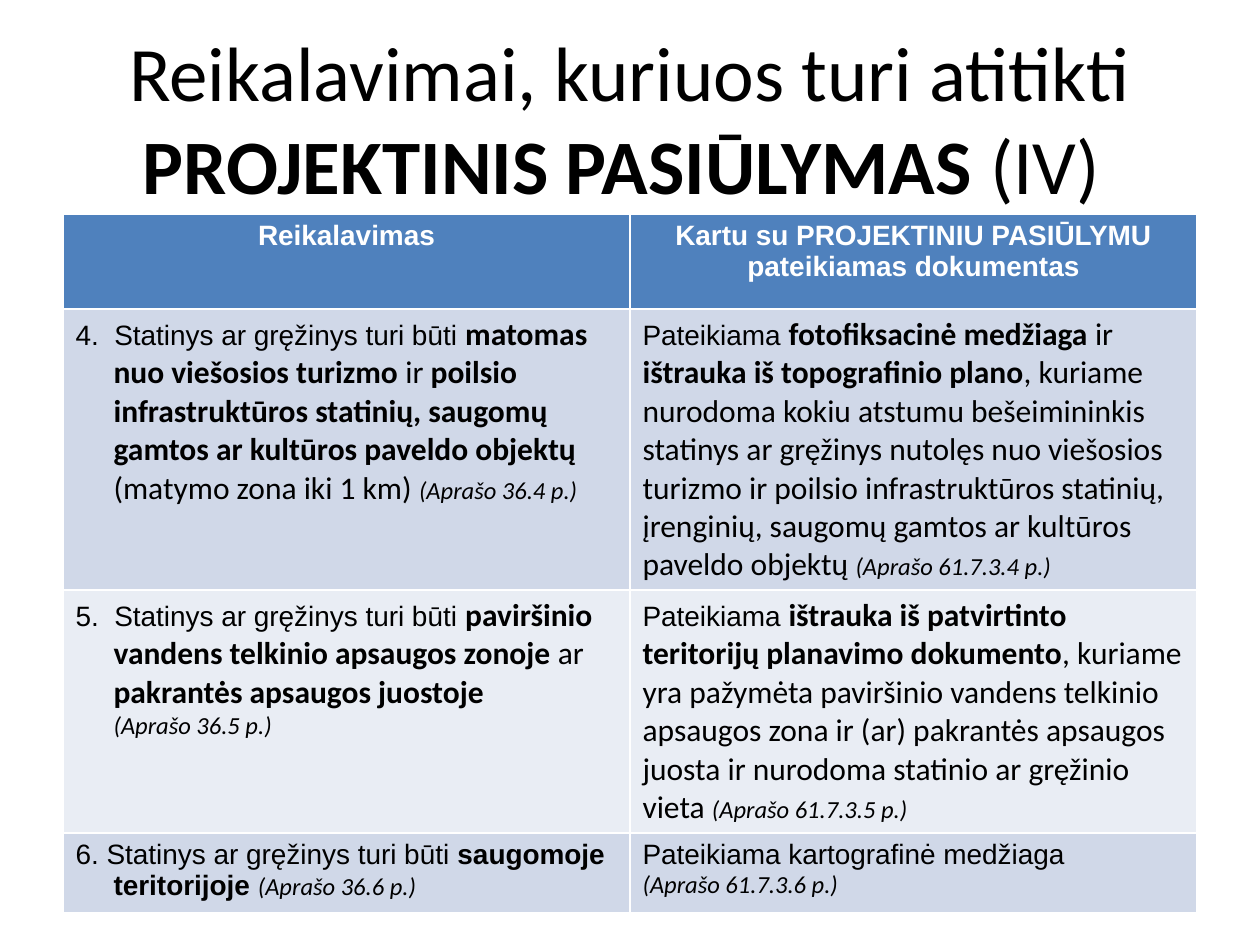
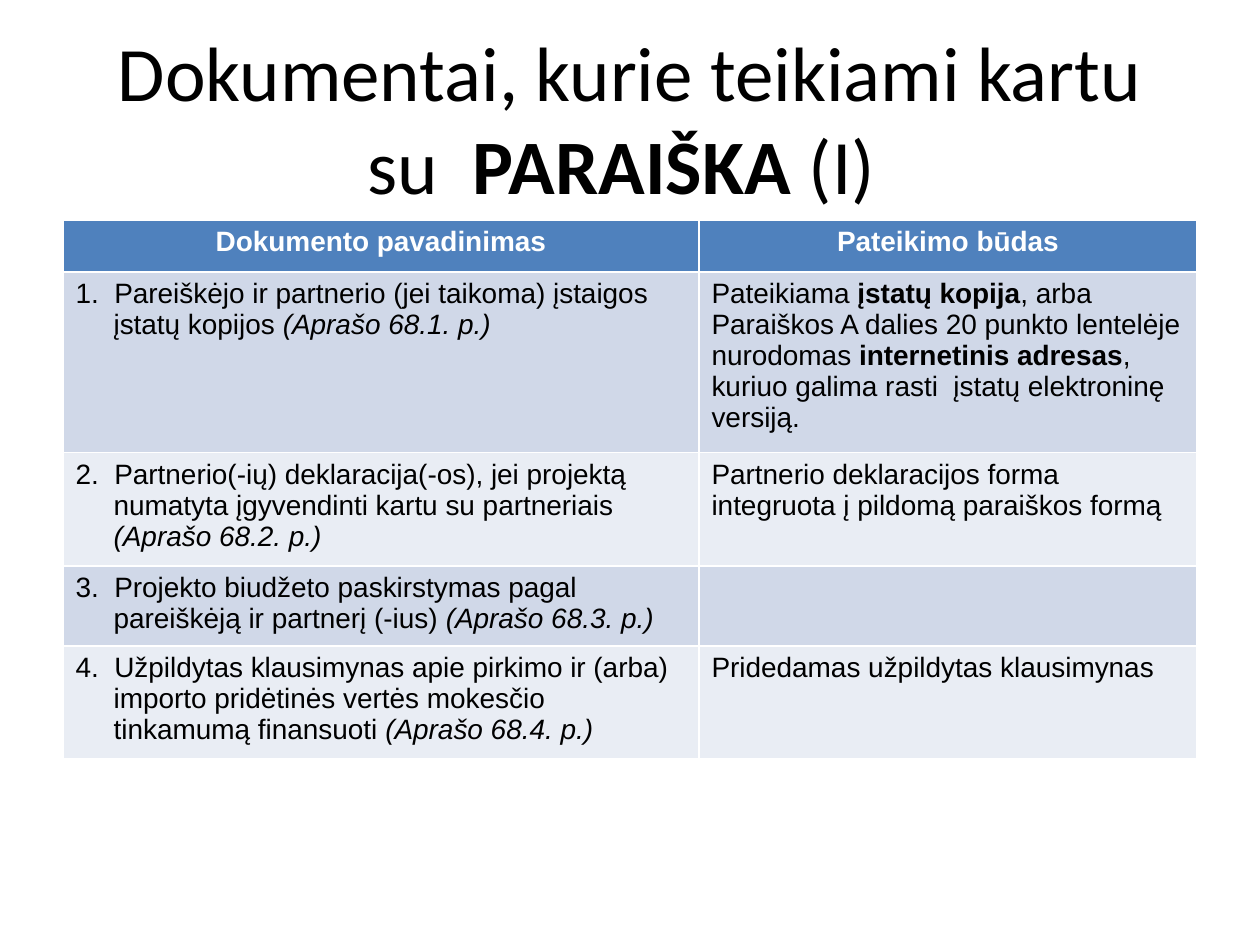
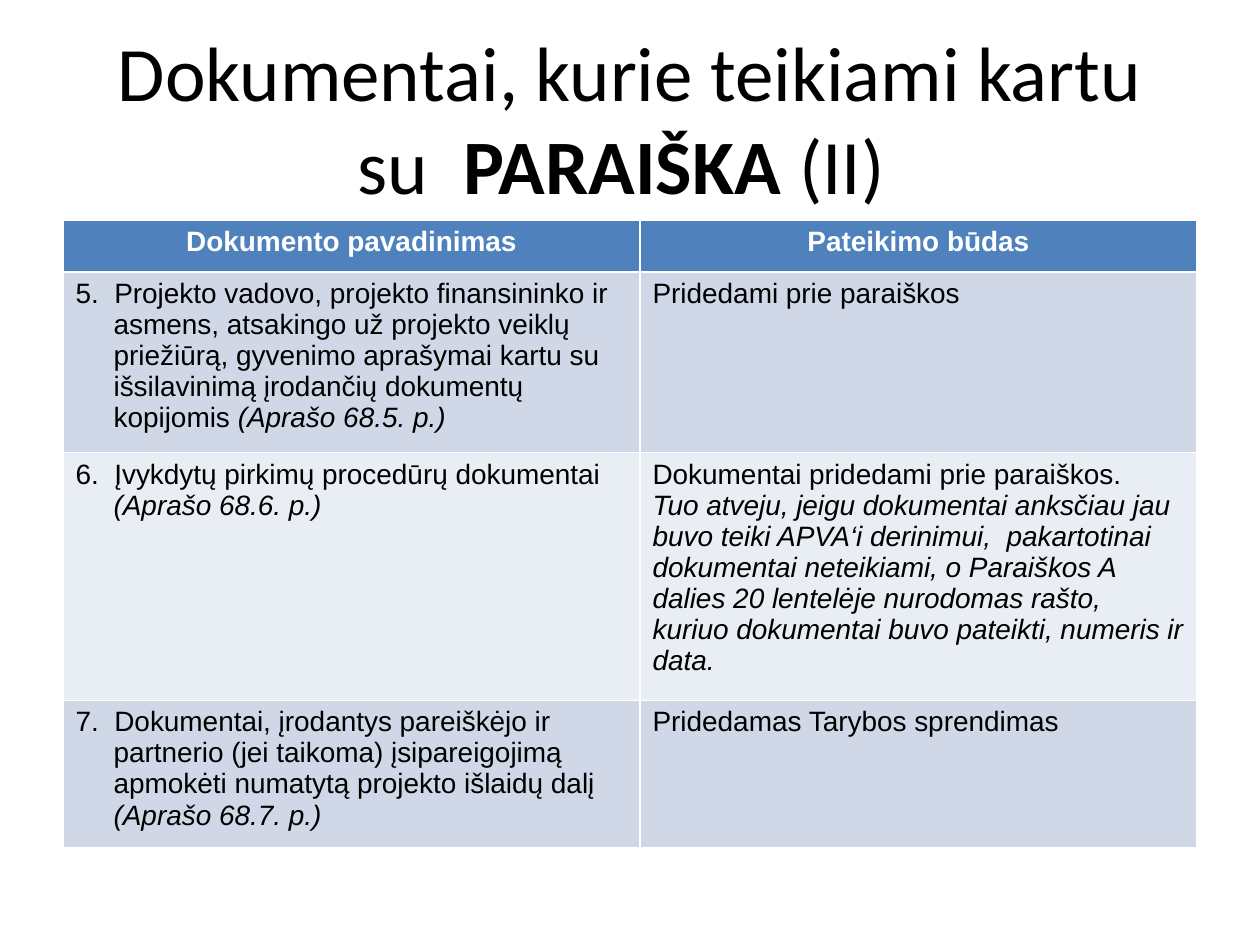
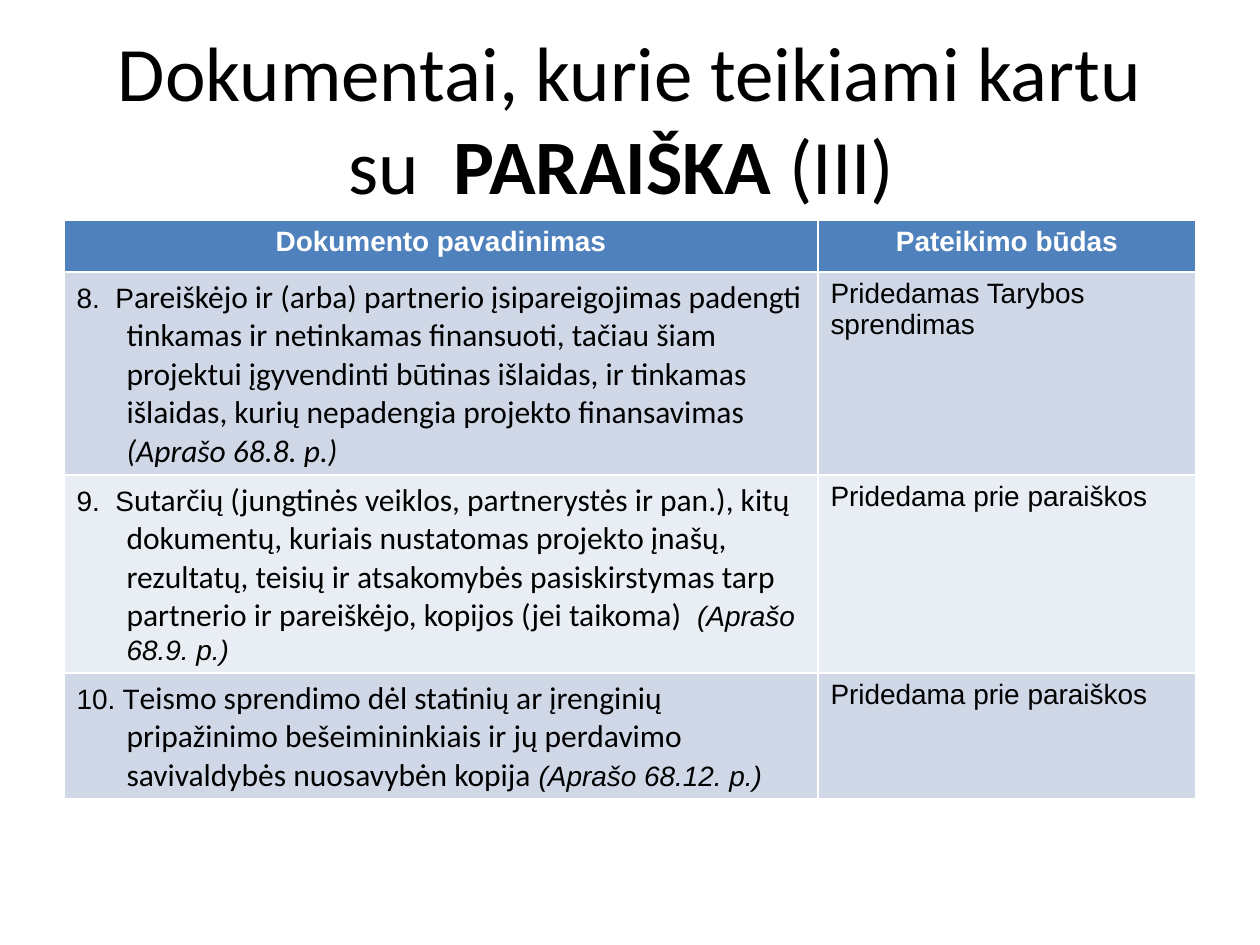
from dataclasses import dataclass

from pptx import Presentation
from pptx import util as u
from pptx.dml.color import RGBColor
from pptx.enum import text

PX_PER_INCH = 126


def px(length):
    return u.Emu(round(length * 914400 / PX_PER_INCH))


@dataclass(frozen=True)
class Theme:
    ink: str = "000000"
    header_ink: str = "FFFFFF"
    header_fill: str = "4F81BD"
    bands: tuple = ("D0D8E8", "E9EDF4")
    title_box: tuple = (63, 38, 1134, 158)


THEME = Theme()

# Run styles: font, size, bold, italic
TITLE = ("Calibri", 44, False, False)
TITLE_BOLD = ("Calibri", 44, True, False)
HEADER = ("Arial", 16, True, False)
PLAIN = ("Arial", 16, False, False)
BOLD = ("Arial", 16, True, False)
ITALIC = ("Arial", 16, False, True)
LARGE = ("Calibri", 18, False, False)
LARGE_BOLD = ("Calibri", 18, True, False)
LARGE_ITALIC = ("Calibri", 18, False, True)
NOTE = ("Calibri", 14, False, True)

# A cell is a list of paragraphs, a paragraph a list of (text, style) runs.
PROPOSAL_ROWS = [
    ([[("4.  Statinys ar gręžinys turi būti ", PLAIN),
       ("matomas nuo viešosios turizmo", LARGE_BOLD),
       (" ir ", LARGE),
       ("poilsio infrastruktūros statinių, saugomų gamtos ar kultūros "
        "paveldo objektų ", LARGE_BOLD),
       ("(matymo zona iki 1 km) ", LARGE),
       ("(Aprašo 36.4 p.)", NOTE)]],
     [[("Pateikiama ", PLAIN),
       ("fotofiksacinė medžiaga ", LARGE_BOLD),
       ("ir ", LARGE),
       ("ištrauka iš topografinio plano", LARGE_BOLD),
       (", kuriame nurodoma kokiu atstumu bešeimininkis statinys ar gręžinys "
        "nutolęs nuo viešosios turizmo ir poilsio infrastruktūros statinių, "
        "įrenginių, saugomų gamtos ar kultūros paveldo objektų ", LARGE),
       ("(Aprašo 61.7.3.4 p.)", NOTE)]]),
    ([[("5.  Statinys ar gręžinys turi būti ", PLAIN),
       ("paviršinio vandens telkinio apsaugos zonoje ", LARGE_BOLD),
       ("ar ", LARGE),
       ("pakrantės apsaugos juostoje", LARGE_BOLD)],
      [("(Aprašo 36.5 p.)", NOTE)]],
     [[("Pateikiama ", PLAIN),
       ("ištrauka iš patvirtinto teritorijų planavimo dokumento", LARGE_BOLD),
       (", kuriame yra pažymėta paviršinio vandens telkinio apsaugos zona ir "
        "(ar) pakrantės apsaugos juosta ir nurodoma statinio ar gręžinio "
        "vieta ", LARGE),
       ("(Aprašo 61.7.3.5 p.)", NOTE)]]),
    ([[("6. Statinys ar gręžinys turi būti ", PLAIN),
       ("saugomoje teritorijoje ", BOLD),
       ("(Aprašo 36.6 p.)", NOTE)]],
     [[("Pateikiama kartografinė medžiaga", PLAIN)],
      [("(Aprašo 61.7.3.6 p.)", NOTE)]]),
]

APPLICATION_ROWS_1 = [
    ([[("1.  Pareiškėjo ir partnerio (jei taikoma) įstaigos įstatų kopijos ",
        PLAIN),
       ("(Aprašo 68.1. p.)", ITALIC)]],
     [[("Pateikiama ", PLAIN),
       ("įstatų kopija", BOLD),
       (", arba Paraiškos A dalies 20 punkto lentelėje nurodomas ", PLAIN),
       ("internetinis adresas", BOLD),
       (", kuriuo galima rasti  įstatų elektroninę versiją.", PLAIN)]]),
    ([[("2.  Partnerio(-ių) deklaracija(-os), jei projektą numatyta "
        "įgyvendinti kartu su partneriais ", PLAIN),
       ("(Aprašo 68.2. p.)", ITALIC)]],
     [[("Partnerio deklaracijos forma integruota į pildomą paraiškos formą",
        PLAIN)]]),
    ([[("3.  Projekto biudžeto paskirstymas pagal pareiškėją ir partnerį "
        "(-ius) ", PLAIN),
       ("(Aprašo 68.3. p.)", ITALIC)]],
     []),
    ([[("4.  Užpildytas klausimynas apie pirkimo ir (arba) importo pridėtinės "
        "vertės mokesčio tinkamumą finansuoti ", PLAIN),
       ("(Aprašo 68.4. p.)", ITALIC)]],
     [[("Pridedamas užpildytas klausimynas", PLAIN)]]),
]

APPLICATION_ROWS_2 = [
    ([[("5.  Projekto vadovo, projekto finansininko ir asmens, atsakingo už "
        "projekto veiklų priežiūrą, gyvenimo aprašymai kartu su išsilavinimą "
        "įrodančių dokumentų kopijomis ", PLAIN),
       ("(Aprašo 68.5. p.)", ITALIC)]],
     [[("Pridedami prie paraiškos", PLAIN)]]),
    ([[("6.  Įvykdytų pirkimų procedūrų dokumentai ", PLAIN),
       ("(Aprašo 68.6. p.)", ITALIC)]],
     [[("Dokumentai pridedami prie paraiškos.", PLAIN)],
      [("Tuo atveju, jeigu dokumentai anksčiau jau buvo teiki APVA‘i "
        "derinimui,  pakartotinai dokumentai neteikiami, o Paraiškos A dalies "
        "20 lentelėje nurodomas rašto, kuriuo dokumentai buvo pateikti, "
        "numeris ir data.", ITALIC)]]),
    ([[("7.  Dokumentai, įrodantys pareiškėjo ir partnerio (jei taikoma) "
        "įsipareigojimą apmokėti numatytą projekto išlaidų dalį ", PLAIN),
       ("(Aprašo 68.7. p.)", ITALIC)]],
     [[("Pridedamas Tarybos sprendimas", PLAIN)]]),
]

APPLICATION_ROWS_3 = [
    ([[("8.  P", PLAIN),
       ("areiškėjo ir (arba) partnerio įsipareigojimas padengti tinkamas ir "
        "netinkamas finansuoti, tačiau šiam projektui įgyvendinti būtinas "
        "išlaidas, ir tinkamas išlaidas, kurių nepadengia projekto "
        "finansavimas ", LARGE),
       ("(Aprašo 68.8. p.)", LARGE_ITALIC)]],
     [[("Pridedamas Tarybos sprendimas", PLAIN)]]),
    ([[("9.  S", PLAIN),
       ("utarčių (jungtinės veiklos, partnerystės ir pan.), kitų dokumentų, "
        "kuriais nustatomas projekto įnašų, rezultatų, teisių ir atsakomybės "
        "pasiskirstymas tarp partnerio ir pareiškėjo, kopijos (jei taikoma)",
        LARGE),
       ("  ", PLAIN),
       ("(Aprašo 68.9. p.)", ITALIC)]],
     [[("Pridedama prie paraiškos", PLAIN)]]),
    ([[("10. T", PLAIN),
       ("eismo sprendimo dėl statinių ar įrenginių pripažinimo "
        "bešeimininkiais ir jų perdavimo savivaldybės nuosavybėn kopija",
        LARGE),
       (" ", PLAIN),
       ("(Aprašo 68.12. p.)", ITALIC)]],
     [[("Pridedama prie paraiškos", PLAIN)]]),
]

PROPOSAL_HEADERS = ("Reikalavimas",
                    "Kartu su PROJEKTINIU PASIŪLYMU pateikiamas dokumentas")
APPLICATION_HEADERS = ("Dokumento pavadinimas", "Pateikimo būdas")


def application_title(part):
    return [("Dokumentai, kurie teikiami kartu su  ", TITLE),
            ("PARAIŠKA ", TITLE_BOLD), (f"({part}) ", TITLE)]


SLIDES = [
    dict(title=[("Reikalavimai, kuriuos turi atitikti ", TITLE),
                ("PROJEKTINIS PASIŪLYMAS ", TITLE_BOLD), ("(IV) ", TITLE)],
         headers=PROPOSAL_HEADERS, rows=PROPOSAL_ROWS, corner=(63, 214),
         widths=(567, 567), heights=(95, 281, 243, 75), hang=38),
    dict(title=application_title("I"),
         headers=APPLICATION_HEADERS, rows=APPLICATION_ROWS_1,
         corner=(63, 220), widths=(636, 498),
         heights=(52, 167, 106, 75, 106), hang=38),
    dict(title=application_title("II"),
         headers=APPLICATION_HEADERS, rows=APPLICATION_ROWS_2,
         corner=(63, 220), widths=(577, 557),
         heights=(52, 167, 230, 136), hang=38),
    dict(title=application_title("III"),
         headers=APPLICATION_HEADERS, rows=APPLICATION_ROWS_3,
         corner=(64, 220), widths=(754, 378),
         heights=(52, 203, 198, 126), hang=50),
]


def style_font(font, style, color):
    font.name, size, font.bold, font.italic = style
    font.size = u.Pt(size)
    font.color.rgb = RGBColor.from_string(color)


def write_paragraphs(frame, paragraphs, color=THEME.ink, centred=False, hang=0):
    """Fill a text frame; hang indents all but the first line."""
    for index, runs in enumerate(paragraphs):
        paragraph = frame.add_paragraph() if index else frame.paragraphs[0]
        if centred:
            paragraph.alignment = text.PP_ALIGN.CENTER
        if hang:
            properties = paragraph._p.get_or_add_pPr()
            properties.set("marL", str(px(hang)))
            properties.set("indent", str(0 if index else -px(hang)))
        for wording, style in runs:
            run = paragraph.add_run()
            run.text = wording
            font = run.font if len(runs) > 1 else paragraph.font
            style_font(font, style, color)


def add_title(slide, runs):
    frame = slide.shapes.add_textbox(*map(px, THEME.title_box)).text_frame
    frame.word_wrap = True
    frame.vertical_anchor = text.MSO_ANCHOR.MIDDLE
    write_paragraphs(frame, [runs], centred=True)


def fill_cell(cell, color):
    cell.fill.solid()
    cell.fill.fore_color.rgb = RGBColor.from_string(color)


def add_requirements(slide, headers, rows, corner, widths, heights, hang):
    size = (sum(widths), sum(heights))
    table = slide.shapes.add_table(len(heights), len(widths),
                                   *map(px, corner + size)).table
    for column, width in zip(table.columns, widths):
        column.width = px(width)
    for row, height in zip(table.rows, heights):
        row.height = px(height)
    for col, header in enumerate(headers):
        cell = table.cell(0, col)
        fill_cell(cell, THEME.header_fill)
        write_paragraphs(cell.text_frame, [[(header, HEADER)]],
                         THEME.header_ink, centred=True)
    for index, contents in enumerate(rows):
        for col, paragraphs in enumerate(contents):
            cell = table.cell(index + 1, col)
            fill_cell(cell, THEME.bands[index % 2])
            write_paragraphs(cell.text_frame, paragraphs,
                             hang=0 if col else hang)


def main():
    deck = Presentation()
    deck.slide_width, deck.slide_height = px(1260), px(945)
    for content in SLIDES:
        slide = deck.slides.add_slide(deck.slide_layouts[6])
        parts = dict(content)
        add_title(slide, parts.pop("title"))
        add_requirements(slide, **parts)
    deck.save("out.pptx")


if __name__ == "__main__":
    main()
